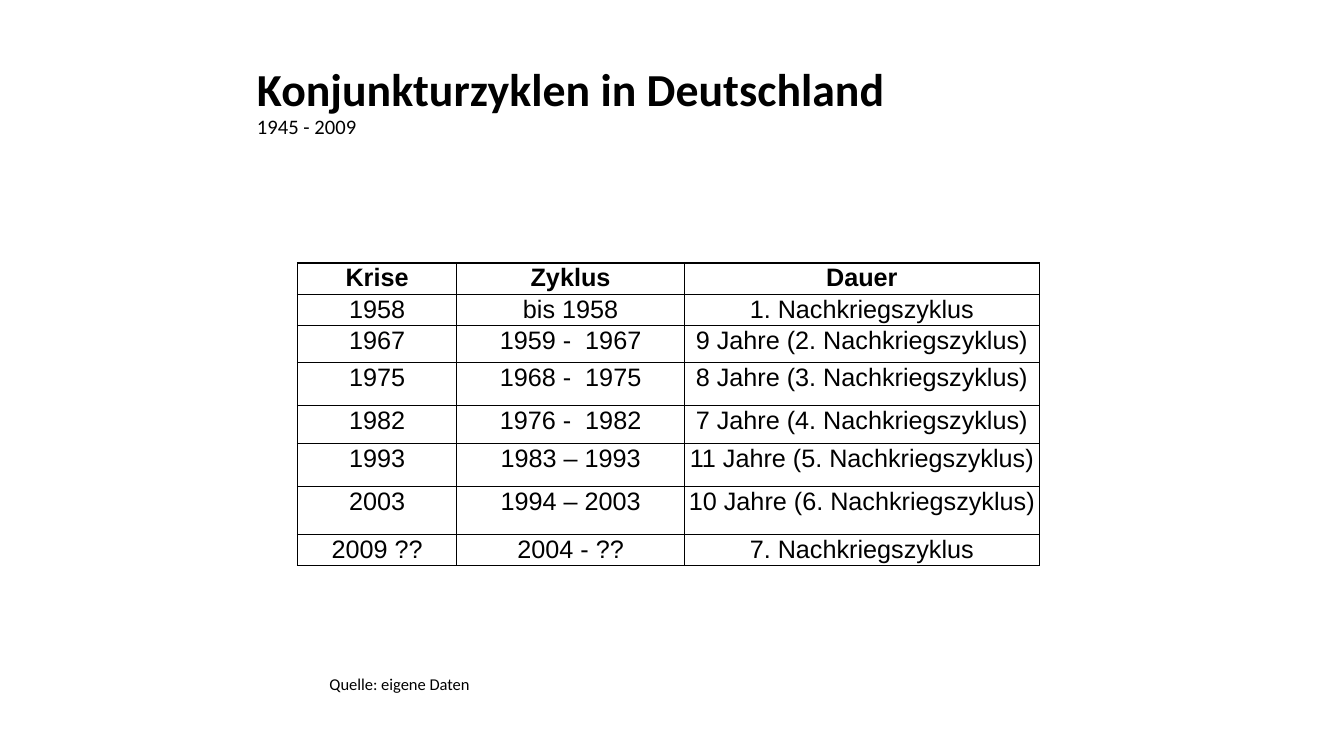
from dataclasses import dataclass

from lxml.etree import SubElement
from pptx import Presentation
from pptx.dml.color import RGBColor
from pptx.enum.text import MSO_ANCHOR, PP_ALIGN
from pptx.oxml.ns import qn
from pptx.util import Inches, Pt


@dataclass(frozen=True)
class Theme:
    ink: str = "000000"
    paper: str = "FFFFFF"
    text_font: str = "Calibri"
    table_font: str = "Arial"
    title_size: float = 32.7
    subtitle_size: float = 14.7
    source_size: float = 11.8
    table_size: float = 18
    border_width: float = 1


CYCLES = [
    ("Krise", "Zyklus", "Dauer"),
    ("1958", "bis 1958", "1. Nachkriegszyklus"),
    ("1967", "1959 -  1967", "9 Jahre (2. Nachkriegszyklus)"),
    ("1975", "1968 -  1975", "8 Jahre (3. Nachkriegszyklus)"),
    ("1982", "1976 -  1982", "7 Jahre (4. Nachkriegszyklus)"),
    ("1993", "1983 – 1993", "11 Jahre (5. Nachkriegszyklus)"),
    ("2003", "1994 – 2003", "10 Jahre (6. Nachkriegszyklus)"),
    ("2009 ??", "2004 - ??", "7. Nachkriegszyklus"),
]
COLUMN_SHARES = [11.85, 16.95, 26.4]
ROW_SHARES = [4.13, 4.13, 4.93, 5.6, 5.07, 5.73, 6.27, 4.13]


def write(paragraph, text, *, font, size, color, bold=False,
          align=PP_ALIGN.LEFT, line_spacing=1.0):
    paragraph.alignment = align
    paragraph.line_spacing = line_spacing
    run = paragraph.add_run()
    run.text = text
    run.font.name = font
    run.font.size = Pt(size)
    run.font.bold = bold
    run.font.color.rgb = RGBColor.from_string(color)


class SlideBuilder:
    """Builds elements on one slide, placed by percentages of its size."""

    def __init__(self, presentation, theme):
        self.theme = theme
        self.width = presentation.slide_width
        self.height = presentation.slide_height
        self.slide = presentation.slides.add_slide(presentation.slide_layouts[6])
        background = self.slide.background.fill
        background.solid()
        background.fore_color.rgb = RGBColor.from_string(theme.paper)

    def across(self, share):
        return round(self.width * share / 100)

    def down(self, share):
        return round(self.height * share / 100)

    def text(self, left, top, width, height, lines, *,
             anchor=MSO_ANCHOR.TOP, bottom_inset=0.05):
        shape = self.slide.shapes.add_textbox(
            self.across(left), self.down(top), self.across(width), self.down(height))
        frame = shape.text_frame
        frame.word_wrap = True
        frame.vertical_anchor = anchor
        frame.margin_bottom = Inches(bottom_inset)
        for index, (line, size, bold) in enumerate(lines):
            paragraph = frame.add_paragraph() if index else frame.paragraphs[0]
            write(paragraph, line, font=self.theme.text_font, size=size,
                  color=self.theme.ink, bold=bold, line_spacing=0.9)

    def table(self, left, top, column_shares, row_shares, rows):
        table = self.slide.shapes.add_table(
            len(rows), len(column_shares), self.across(left), self.down(top),
            self.across(sum(column_shares)), self.down(sum(row_shares))).table
        table.horz_banding = False
        for column, share in zip(table.columns, column_shares):
            column.width = self.across(share)
        for row, share in zip(table.rows, row_shares):
            row.height = self.down(share)
        for row_index, values in enumerate(rows):
            for column_index, value in enumerate(values):
                self.cell(table.cell(row_index, column_index), value,
                          bold=row_index == 0)

    def cell(self, cell, value, *, bold):
        cell.margin_left = cell.margin_right = cell.margin_top = Inches(0.01)
        cell.margin_bottom = 0
        write(cell.text_frame.paragraphs[0], value, font=self.theme.table_font,
              size=self.theme.table_size, color=self.theme.ink, bold=bold,
              align=PP_ALIGN.CENTER)
        properties = cell._tc.get_or_add_tcPr()
        for side in ("lnL", "lnR", "lnT", "lnB"):
            border = SubElement(properties, qn(f"a:{side}"),
                                w=str(Pt(self.theme.border_width)))
            fill = SubElement(border, qn("a:solidFill"))
            SubElement(fill, qn("a:srgbClr"), val=self.theme.ink)
        cell.fill.background()


def main():
    presentation = Presentation()
    presentation.slide_width = Inches(13.33)
    presentation.slide_height = Inches(7.5)
    theme = Theme()
    builder = SlideBuilder(presentation, theme)
    builder.text(18.38, 11.87, 63.75, 9.47, [
        ("Konjunkturzyklen in Deutschland", theme.title_size, True),
        ("1945 - 2009", theme.subtitle_size, False),
    ], anchor=MSO_ANCHOR.MIDDLE, bottom_inset=0.49)
    builder.text(23.78, 88.8, 52.5, 7.33,
                 [("Quelle: eigene Daten", theme.source_size, False)])
    builder.table(22.13, 34.8, COLUMN_SHARES, ROW_SHARES, CYCLES)
    presentation.save("out.pptx")


if __name__ == "__main__":
    main()
